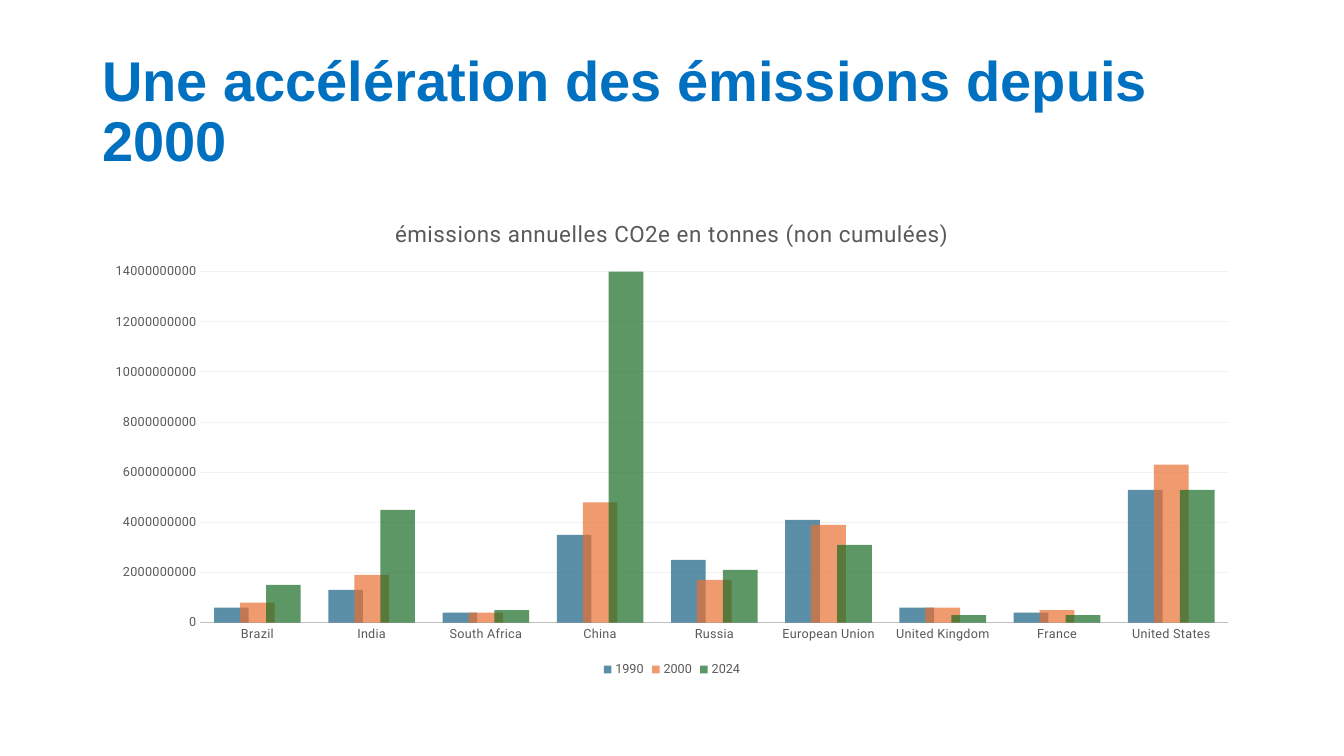
import pptx
import pptx.chart.data
import pptx.dml.color
import pptx.enum.chart
import pptx.enum.text
import pptx.oxml
import pptx.oxml.ns
import pptx.util

Pt = pptx.util.Pt
LEFT, WIDTH = 66, 828
HUNDRED_MILLION = 100_000_000
GREY = "595959"

COUNTRIES = ["Brazil", "India", "South Africa", "China", "Russia",
             "European Union", "United Kingdom", "France", "United States"]
# Year: (colour, emissions in hundreds of millions of tonnes)
EMISSIONS = {
    "1990": ("156082", [6, 13, 4, 35, 25, 41, 6, 4, 53]),
    "2000": ("E97132", [8, 19, 4, 48, 17, 39, 6, 5, 63]),
    "2024": ("196B24", [15, 45, 5, 141, 21, 31, 3, 3, 53]),
}


def rgb(value):
    return pptx.dml.color.RGBColor.from_string(value)


class EmissionsSlide:
    heading_font = "Arial"
    chart_font = "Roboto"

    def __init__(self, deck):
        self.slide = deck.slides.add_slide(deck.slide_layouts[6])

    def style(self, font, name, size, colour, bold=False):
        font.name, font.size, font.bold = name, Pt(size), bold
        font.color.rgb = rgb(colour)

    def heading(self, text, top, height):
        box = self.slide.shapes.add_textbox(Pt(LEFT), Pt(top), Pt(WIDTH), Pt(height))
        frame = box.text_frame
        frame.word_wrap = True
        frame.vertical_anchor = pptx.enum.text.MSO_ANCHOR.MIDDLE
        paragraph = frame.paragraphs[0]
        paragraph.line_spacing = 0.9
        run = paragraph.add_run()
        run.text = text
        self.style(run.font, self.heading_font, 40, "0070C0", bold=True)

    def column_chart(self, caption, top, height):
        data = pptx.chart.data.CategoryChartData(number_format="General")
        data.categories = COUNTRIES
        for year, (_, amounts) in EMISSIONS.items():
            data.add_series(year, [n * HUNDRED_MILLION for n in amounts])
        chart = self.slide.shapes.add_chart(
            pptx.enum.chart.XL_CHART_TYPE.COLUMN_CLUSTERED,
            Pt(LEFT), Pt(top), Pt(WIDTH), Pt(height), data).chart
        self.style(chart.font, self.chart_font, 10, "000000")
        self.caption(chart, caption)
        self.axes(chart)
        self.columns(chart.plots[0])
        chart.has_legend = True
        chart.legend.position = pptx.enum.chart.XL_LEGEND_POSITION.BOTTOM
        chart.legend.include_in_layout = False
        self.style(chart.legend.font, self.chart_font, 9, GREY)

    def caption(self, chart, text):
        chart.has_title = True
        chart.chart_title.include_in_layout = False
        run = chart.chart_title.text_frame.paragraphs[0].add_run()
        run.text = text
        self.style(run.font, self.chart_font, 16, GREY)
        self.letter_spacing(chart.element, "c:chart/c:title//a:rPr", 50)

    def axes(self, chart):
        for axis in (chart.category_axis, chart.value_axis):
            axis.major_tick_mark = axis.minor_tick_mark = pptx.enum.chart.XL_TICK_MARK.NONE
            self.style(axis.tick_labels.font, self.chart_font, 9, GREY)
        self.letter_spacing(chart.element, "c:chart/c:plotArea//c:txPr//a:defRPr", 20)
        baseline = chart.category_axis.format.line
        baseline.color.rgb = rgb("BFBFBF")
        baseline.width = Pt(1.25)
        tonnes = chart.value_axis
        tonnes.minimum_scale = 0
        tonnes.maximum_scale = 140 * HUNDRED_MILLION
        tonnes.major_unit = 20 * HUNDRED_MILLION
        tonnes.format.line.fill.background()
        grid = tonnes.major_gridlines.format.line
        grid.color.rgb = rgb("F2F2F2")
        grid.width = Pt(0.75)

    def columns(self, plot):
        plot.gap_width, plot.overlap = 80, 25
        plot.vary_by_categories = False
        for series, (colour, _) in zip(plot.series, EMISSIONS.values()):
            series.invert_if_negative = False
            series.format.fill.solid()
            series.format.fill.fore_color.rgb = rgb(colour)
            self.opacity(series, 70)

    def letter_spacing(self, element, query, hundredths):
        for properties in element.xpath(query):
            properties.set("spc", str(hundredths))

    def opacity(self, series, percent):
        for colour in series.format.element.xpath("c:spPr/a:solidFill/a:srgbClr") \
                if hasattr(series.format, "element") \
                else series._element.xpath("c:spPr/a:solidFill/a:srgbClr"):
            alpha = pptx.oxml.parse_xml(
                f'<a:alpha {pptx.oxml.ns.nsdecls("a")} val="{percent * 1000}"/>')
            colour.append(alpha)


def main():
    deck = pptx.Presentation()
    deck.slide_width, deck.slide_height = Pt(960), Pt(540)
    page = EmissionsSlide(deck)
    page.heading("Une accélération des émissions depuis 2000", top=28.75, height=104.38)
    page.column_chart("émissions annuelles CO2e en tonnes (non cumulées)",
                      top=143.75, height=342.62)
    deck.save("out.pptx")


if __name__ == "__main__":
    main()
